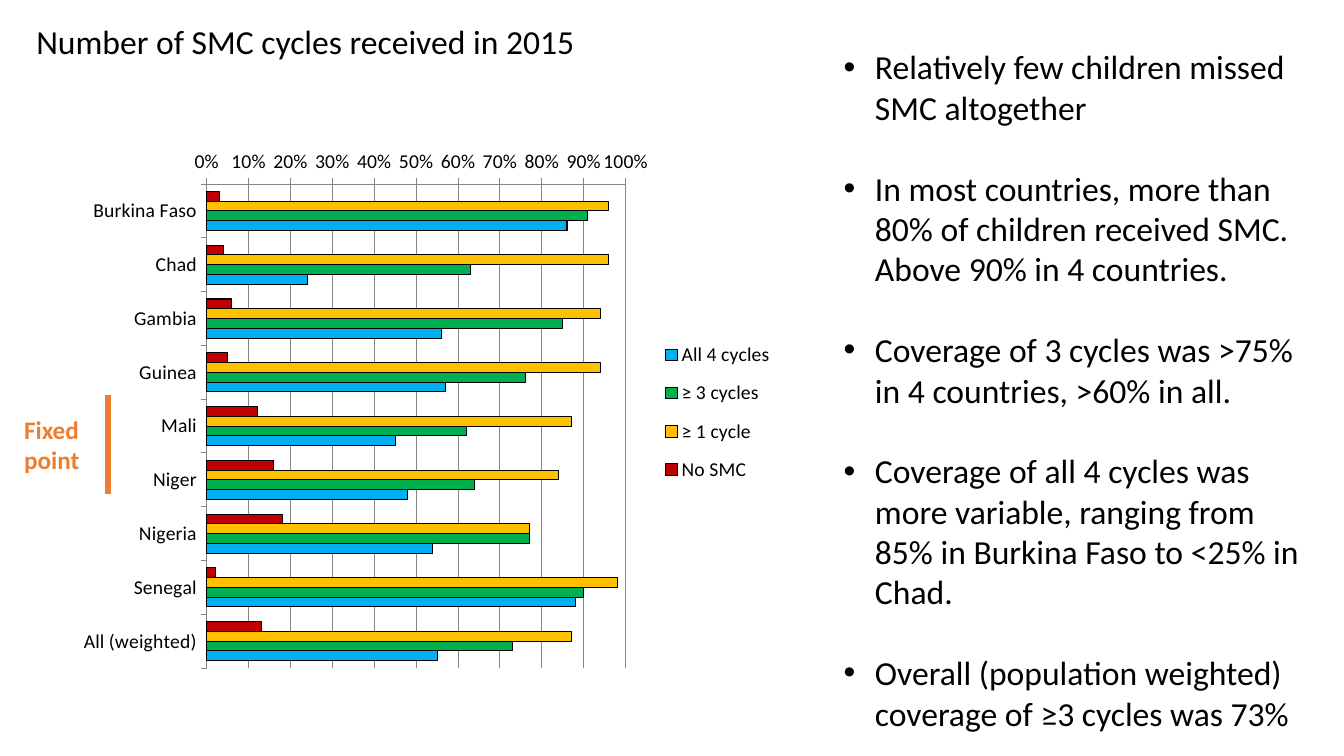
from dataclasses import dataclass

from lxml import etree
from pptx import Presentation
from pptx import util as u
from pptx.chart.data import CategoryChartData
from pptx.dml.color import RGBColor
from pptx.enum import chart as ch
from pptx.enum import shapes, text
from pptx.oxml import parse_xml
from pptx.oxml.ns import nsdecls, qn


@dataclass(frozen=True)
class Theme:
    font: str = "Calibri"
    ink: str = "000000"
    accent: str = "ED7D31"
    grid: str = "868686"
    body: int = 24
    label: int = 18
    axis: int = 14


COUNTRIES = ["Burkina Faso", "Chad", "Gambia", "Guinea", "Mali", "Niger",
             "Nigeria", "Senegal", "All (weighted)"]
COVERAGE = [
    ("No SMC", "C00000", [0.03, 0.04, 0.06, 0.05, 0.12, 0.16, 0.18, 0.02, 0.13]),
    ("≥ 1 cycle", "FFC000", [0.96, 0.96, 0.94, 0.94, 0.87, 0.84, 0.77, 0.98, 0.87]),
    ("≥ 3 cycles", "00B050", [0.91, 0.63, 0.85, 0.76, 0.62, 0.64, 0.77, 0.9, 0.73]),
    ("All 4 cycles", "00B0F0", [0.86, 0.24, 0.56, 0.57, 0.45, 0.48, 0.54, 0.88, 0.55]),
]
FINDINGS = [
    "Relatively few children missed SMC altogether",
    "In most countries, more than 80% of children received SMC. Above 90% in 4 countries.",
    "Coverage of 3 cycles was >75% in 4 countries, >60% in all.",
    "Coverage of all 4 cycles was more variable, ranging from 85% in Burkina Faso to <25% in Chad.",
    "Overall (population weighted) coverage of ≥3 cycles was 73%",
]


class SlideBuilder:
    def __init__(self, deck, theme):
        self.theme = theme
        self.page = deck.slides.add_slide(deck.slide_layouts[5])

    def style(self, font, size, color=None, bold=False):
        font.name = self.theme.font
        font.size = u.Pt(size)
        font.bold = bold
        font.color.rgb = RGBColor.from_string(color or self.theme.ink)

    def title(self, words, at):
        box = self.page.shapes.title
        box.left, box.top, box.width, box.height = map(u.Inches, at)
        frame = box.text_frame
        frame.text = words
        frame.word_wrap = True
        frame.auto_size = text.MSO_AUTO_SIZE.NONE
        frame.vertical_anchor = text.MSO_ANCHOR.TOP
        para = frame.paragraphs[0]
        para.alignment = text.PP_ALIGN.LEFT
        self.style(para.runs[0].font, self.theme.body)

    def text(self, lines, at, size, color=None, bold=False, bullet=False):
        frame = self.page.shapes.add_textbox(*map(u.Inches, at)).text_frame
        frame.word_wrap = True
        frame.text = "\n".join(lines)
        for index, para in enumerate(frame.paragraphs):
            if bullet:
                self.bullet(para)
                if index:
                    para.space_before = u.Pt(29)
            self.style(para.runs[0].font, size, color, bold)

    def bullet(self, para):
        props = para._p.get_or_add_pPr()
        indent = u.Inches(0.31)
        props.set("marL", str(indent))
        props.set("indent", str(-indent))
        etree.SubElement(props, qn("a:buFont")).set("typeface", "Arial")
        etree.SubElement(props, qn("a:buChar")).set("char", "•")

    def line(self, start, end, color, width):
        line = self.page.shapes.add_connector(
            shapes.MSO_CONNECTOR.STRAIGHT, *map(u.Inches, start + end))
        line.line.color.rgb = RGBColor.from_string(color)
        line.line.width = u.Pt(width)
        etree.SubElement(line._element.spPr, qn("a:effectLst"))

    def place(self, part, index, area, inner=False):
        for old in part.findall(qn("c:layout")):
            part.remove(old)
        target = '<c:layoutTarget val="inner"/>' if inner else ""
        modes = "".join(f'<c:{side}Mode val="edge"/>' for side in "xy")
        sizes = "".join(f'<c:{side} val="{value}"/>' for side, value in zip("xywh", area))
        part.insert(index, parse_xml(
            f'<c:layout {nsdecls("c")}><c:manualLayout>{target}{modes}{sizes}'
            "</c:manualLayout></c:layout>"))

    def bar_chart(self, categories, series, at, plot_area, legend_area):
        data = CategoryChartData(number_format="0%")
        data.categories = categories
        for name, _, values in series:
            data.add_series(name, values)
        chart = self.page.shapes.add_chart(
            ch.XL_CHART_TYPE.BAR_CLUSTERED, *map(u.Inches, at), data).chart
        chart.has_title = False
        self.style(chart.font, self.theme.axis)
        plot = chart.plots[0]
        plot.gap_width = 150
        plot.overlap = 0
        plot.vary_by_categories = False
        for bars, (_, color, _) in zip(plot.series, series):
            bars.invert_if_negative = False
            bars.format.fill.solid()
            bars.format.fill.fore_color.rgb = RGBColor.from_string(color)
            bars.format.line.color.rgb = RGBColor.from_string(self.theme.ink)
            bars.format.line.width = u.Pt(0.75)
        chart.category_axis.reverse_order = True
        scale = chart.value_axis
        scale.minimum_scale, scale.maximum_scale, scale.major_unit = 0, 1, 0.1
        scale.has_major_gridlines = True
        scale.tick_labels.number_format = "0%"
        scale.tick_labels.number_format_is_linked = False
        for axis in (chart.category_axis, scale):
            axis.major_tick_mark = ch.XL_TICK_MARK.OUTSIDE
            self.style(axis.tick_labels.font, self.theme.axis)
        for rule in (chart.category_axis, scale, scale.major_gridlines):
            rule.format.line.color.rgb = RGBColor.from_string(self.theme.grid)
            rule.format.line.width = u.Pt(0.75)
        chart.has_legend = True
        legend = chart.legend
        legend.position = ch.XL_LEGEND_POSITION.RIGHT
        legend.include_in_layout = False
        self.style(legend.font, self.theme.axis)
        self.place(chart._chartSpace.find(".//" + qn("c:plotArea")), 0, plot_area, inner=True)
        self.place(legend._element, 1, legend_area)


def main():
    deck = Presentation()
    deck.slide_width, deck.slide_height = u.Inches(13.33), u.Inches(7.5)
    theme = Theme()
    slide = SlideBuilder(deck, theme)
    slide.title("Number of SMC cycles received in 2015", (0.26, 0.16, 6.99, 0.5))
    slide.bar_chart(COUNTRIES, COVERAGE, (0.52, 1.33, 7.29, 5.52),
                    plot_area=(0.21, 0.09, 0.57, 0.87),
                    legend_area=(0.82, 0.35, 0.17, 0.3))
    slide.text(FINDINGS, (8.27, 0.41, 4.77, 7.88), theme.body, bullet=True)
    slide.line((1.07, 3.92), (1.07, 4.9), theme.accent, 4.25)
    slide.text(["Fixed", "point"], (0.14, 4.06, 1.42, 0.71), theme.label, theme.accent, bold=True)
    deck.save("out.pptx")


if __name__ == "__main__":
    main()
